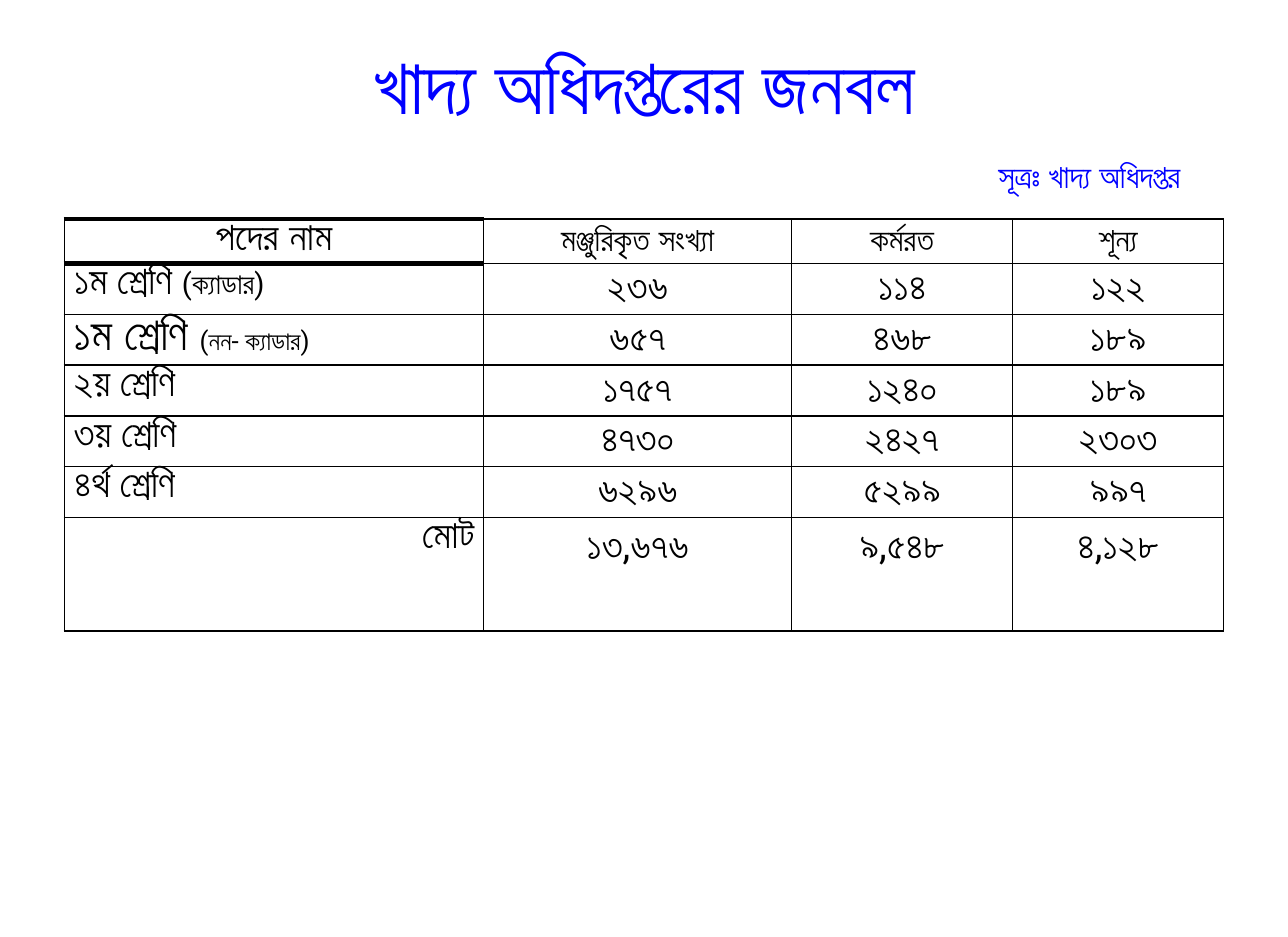
from lxml import etree
from pptx import Presentation
from pptx import util as u
from pptx.dml.color import RGBColor
from pptx.enum import text
from pptx.oxml import ns

# Content
TITLE = [("খাদ্য অধিদপ্তরের জনবল", 48, "c"), ("সূত্রঃ খাদ্য অধিদপ্তর", 20, "r")]
HEADER = ["পদের নাম", "মঞ্জুরিকৃত সংখ্যা", "কর্মরত", "শূন্য"]
# Each label is a list of (wording, size) parts
STAFF = [
    ([("১ম শ্রেণি ", 24), ("(ক্যাডার)", 18)], "২৩৬", "১১৪", "১২২"),
    ([("১ম শ্রেণি ", 28), ("(নন- ক্যাডার)", 16)], "৬৫৭", "৪৬৮", "১৮৯"),
    ([("২য় শ্রেণি", 24)], "১৭৫৭", "১২৪০", "১৮৯"),
    ([("৩য় শ্রেণি", 24)], "৪৭৩০", "২৪২৭", "২৩০৩"),
    ([("৪র্থ শ্রেণি", 24)], "৬২৯৬", "৫২৯৯", "৯৯৭"),
    ([("মোট", 24)], "১৩,৬৭৬", "৯,৫৪৮", "৪,১২৮"),
]

# Look and grid
COLORS = {"title": "0000FF", "ink": "000000", "paper": "FFFFFF"}
FONT = "Roboto"
ALIGN = {"l": text.PP_ALIGN.LEFT, "c": text.PP_ALIGN.CENTER, "r": text.PP_ALIGN.RIGHT}
WIDTH, HEIGHT = u.Inches(11), u.Inches(8)
LEFT, TABLE_WIDTH = int(WIDTH * 0.05), int(WIDTH * 0.9)
COLS = [3.58, 2.63, 1.89, 1.8]
ROWS = [0.37] + [0.43] * 5 + [0.97]
LABEL_INSETS = {"margin_left": 0.08, "margin_right": 0.08, "margin_top": 0, "margin_bottom": 0}
VALUE_INSETS = {"margin_left": 0.11, "margin_right": 0.11, "margin_top": 0.05, "margin_bottom": 0.05}
TITLE_INSETS = {**VALUE_INSETS, "margin_left": 0.37, "margin_right": 0.37}


def set_insets(target, insets):
    for name, inches in insets.items():
        setattr(target, name, u.Inches(inches))


def add_run(p, wording, size, color, bold=False):
    r = p.add_run()
    r.text = wording
    for name, value in {"name": FONT, "size": u.Pt(size), "bold": bold}.items():
        setattr(r.font, name, value)
    r.font.color.rgb = RGBColor.from_string(COLORS[color])


def set_borders(cell, widths):
    tc_pr = cell._tc.get_or_add_tcPr()
    for i, (side, width) in enumerate(widths.items()):
        line = etree.Element(ns.qn(f"a:ln{side}"), w=str(u.Pt(width)))
        fill = etree.SubElement(line, ns.qn("a:solidFill"))
        etree.SubElement(fill, ns.qn("a:srgbClr"), val=COLORS["ink"])
        tc_pr.insert(i, line)


def fill_cell(cell, parts, align, insets, bold, widths):
    set_insets(cell, insets)
    cell.fill.solid()
    cell.fill.fore_color.rgb = RGBColor.from_string(COLORS["paper"])
    p = cell.text_frame.paragraphs[0]
    p.alignment = ALIGN[align]
    for wording, size in parts:
        add_run(p, wording, size, "ink", bold)
    set_borders(cell, widths)


prs = Presentation()
prs.slide_width, prs.slide_height = WIDTH, HEIGHT
s = prs.slides.add_slide(prs.slide_layouts[5])

# Title with the source line below it
title = s.shapes.title
title.left, title.top = LEFT, int(HEIGHT * 0.04)
title.width, title.height = TABLE_WIDTH, u.Inches(1.33)
tf = title.text_frame
tf.word_wrap = True
tf.auto_size = text.MSO_AUTO_SIZE.NONE
tf.vertical_anchor = text.MSO_ANCHOR.MIDDLE
set_insets(tf, TITLE_INSETS)
for i, (wording, size, align) in enumerate(TITLE):
    p = tf.add_paragraph() if i else tf.paragraphs[0]
    p.alignment = ALIGN[align]
    p.space_before = u.Pt(16 * i)
    add_run(p, wording, size, "title")

# Staff table
frame = s.shapes.add_table(len(ROWS), len(COLS), LEFT, u.Inches(1.87),
                           TABLE_WIDTH, u.Inches(sum(ROWS)))
table = frame.table
table.first_row = table.horz_banding = False
for column, width in zip(table.columns, COLS):
    column.width = u.Inches(width)
for row, height in zip(table.rows, ROWS):
    row.height = u.Inches(height)

last = len(STAFF)
for i, (label, *values) in enumerate([([(HEADER[0], 24)], *HEADER[1:]), *STAFF]):
    header = i == 0
    label_align = {0: "c", last: "r"}.get(i, "l")
    # The label heading is framed by heavy rules
    label_lines = {"L": 1, "R": 1, "T": 3 if i < 2 else 1, "B": 3 if header else 1}
    fill_cell(table.cell(i, 0), label, label_align, LABEL_INSETS, header, label_lines)
    for j, value in enumerate(values, 1):
        fill_cell(table.cell(i, j), [(value, 20 if header else 24)], "c",
                  VALUE_INSETS, header, dict.fromkeys("LRTB", 1))

prs.save("out.pptx")
